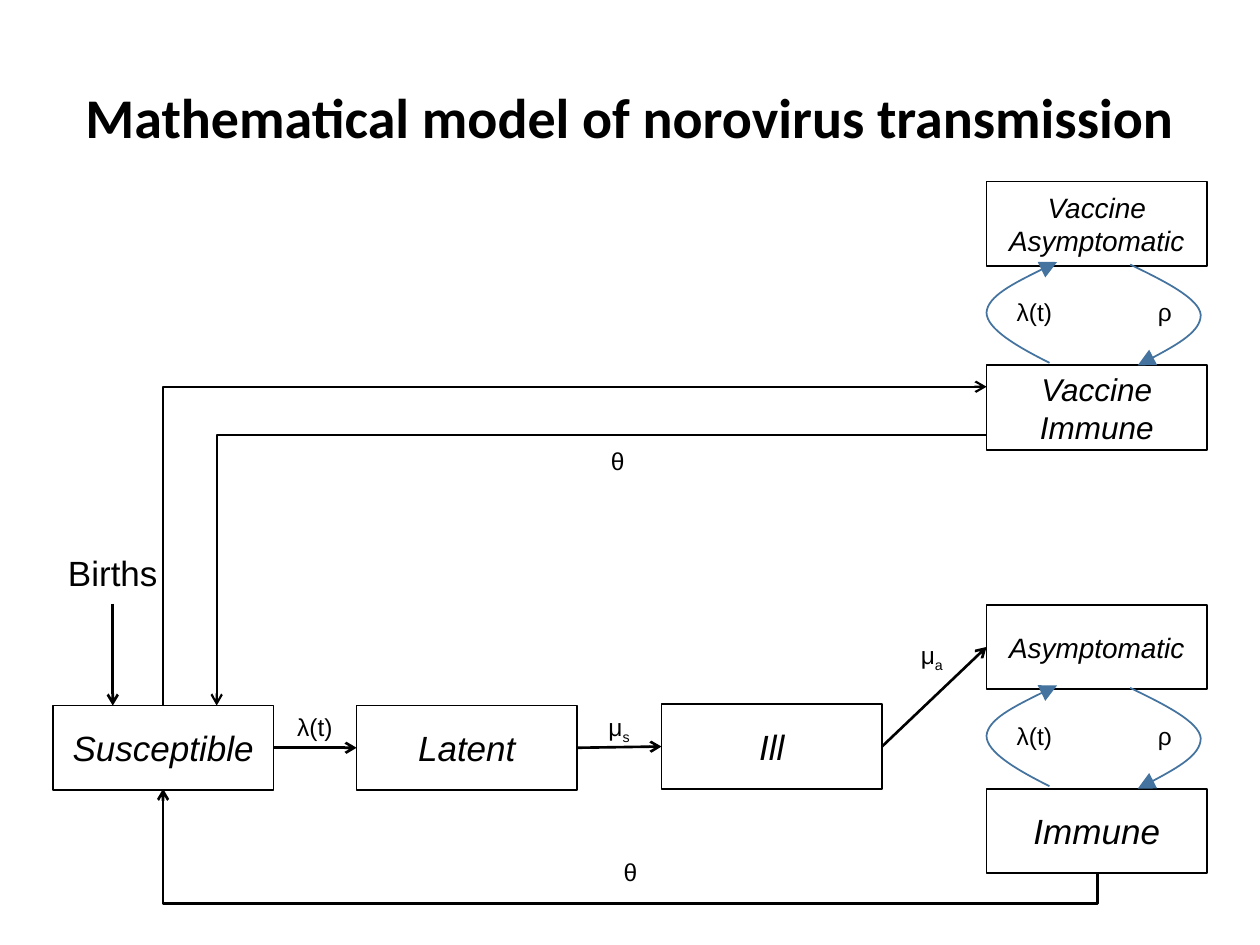
from dataclasses import dataclass

from lxml.etree import SubElement
from pptx import Presentation
from pptx.dml.color import RGBColor
from pptx.enum.shapes import MSO_CONNECTOR, MSO_SHAPE
from pptx.enum.text import MSO_ANCHOR, PP_ALIGN
from pptx.oxml.ns import qn
from pptx.util import Inches, Pt


@dataclass(frozen=True)
class Theme:
    ink: RGBColor = RGBColor(0, 0, 0)
    paper: RGBColor = RGBColor(255, 255, 255)
    curve: RGBColor = RGBColor(0x43, 0x73, 0x9E)
    title_font: str = "Calibri"
    body_font: str = "Arial"
    title: int = 32
    state: int = 20
    medium: int = 18
    small: int = 16
    label: int = 14


theme = Theme()
COLUMNS = [0.42, 2.83, 5.25, 7.83]
CHAIN_TOP = 5.6
PAIR_TOPS = [1.44, 4.8]
PAIR_STEP = 1.46
BOX_WIDTH, BOX_HEIGHT = 1.75, 0.67


def style_text(shape, size, italic=False, align=PP_ALIGN.CENTER, anchor=MSO_ANCHOR.MIDDLE):
    shape.text_frame.vertical_anchor = anchor
    for para in shape.text_frame.paragraphs:
        para.alignment = align
        for span in para.runs:
            span.font.name = theme.body_font
            span.font.size = Pt(size)
            span.font.italic = italic
            span.font.color.rgb = theme.ink


def style_line(shape, color, width, end, arrow, size="med"):
    """Colour an open line and put an arrowhead on its headEnd or tailEnd."""
    shape.line.color.rgb = color
    shape.line.width = Pt(width)
    properties = shape.element.spPr
    SubElement(properties.find(qn("a:ln")), qn("a:" + end), type=arrow, w=size, len=size)
    if properties.find(qn("a:effectLst")) is None:
        SubElement(properties, qn("a:effectLst"))


deck = Presentation()
deck.slide_width, deck.slide_height = Inches(10), Inches(7.5)
page = deck.slides.add_slide(deck.slide_layouts[5])
shapes = page.shapes

title = shapes.title
title.left, title.top, title.width, title.height = map(Inches, (0.5, 0.33, 9, 1.25))
title.text_frame.text = "Mathematical model of norovirus transmission"
style_text(title, theme.title)
title.text_frame.paragraphs[0].line_spacing = 0.9
title_font = title.text_frame.paragraphs[0].runs[0].font
title_font.name, title_font.bold = theme.title_font, True

# Elbow arrows, each turned a quarter so that it leaves its box vertically
chain_middle = COLUMNS[0] + BOX_WIDTH / 2
elbows = [
    ((8.71, 6.92), (chain_middle, 6.26), "bentConnector3", 1.5, "tailEnd"),
    ((chain_middle, CHAIN_TOP), (COLUMNS[3], 3.07), "bentConnector2", 1.25, "tailEnd"),
    ((1.72, CHAIN_TOP), (8.25, 3.45), "bentConnector2", 1.25, "headEnd"),
]
for begin, finish, preset, width, end in elbows:
    center_x, center_y = (begin[0] + finish[0]) / 2, (begin[1] + finish[1]) / 2
    turned = [Inches(value) for x, y in (begin, finish)
              for value in (center_x + y - center_y, center_y - x + center_x)]
    elbow = shapes.add_connector(MSO_CONNECTOR.ELBOW, *turned)
    elbow.rotation = 90
    elbow.element.spPr.find(qn("a:xfrm")).set("rot", str(90 * 60000))
    geometry = elbow.element.spPr.find(qn("a:prstGeom"))
    geometry.set("prst", preset)
    if preset == "bentConnector3":
        SubElement(geometry.get_or_add_avLst(), qn("a:gd"), name="adj1", fmla="val -38000")
    style_line(elbow, theme.ink, width, end, "arrow")

# State boxes
states = [
    ("Susceptible", COLUMNS[0], CHAIN_TOP, theme.state),
    ("Latent", COLUMNS[1], CHAIN_TOP, theme.state),
    ("Ill", COLUMNS[2], CHAIN_TOP - 0.01, theme.state),
    ("Asymptomatic", COLUMNS[3], PAIR_TOPS[1], theme.small),
    ("Immune", COLUMNS[3], PAIR_TOPS[1] + PAIR_STEP, theme.state),
    ("Vaccine Asymptomatic", COLUMNS[3], PAIR_TOPS[0], theme.small),
    ("Vaccine Immune", COLUMNS[3], PAIR_TOPS[0] + PAIR_STEP, theme.medium),
]
boxes = {}
for name, left, top, size in states:
    box = shapes.add_shape(MSO_SHAPE.RECTANGLE, Inches(left), Inches(top),
                           Inches(BOX_WIDTH), Inches(BOX_HEIGHT))
    box.shadow.inherit = False
    box.fill.solid()
    box.fill.fore_color.rgb = theme.paper
    box.line.color.rgb = theme.ink
    box.line.width = Pt(1)
    box.text_frame.word_wrap = True
    box.text_frame.text = name
    style_text(box, size, italic=True)
    boxes[name] = box

births = shapes.add_textbox(Inches(0.37), Inches(4.29), Inches(1.05), Inches(0.5))
births.text_frame.word_wrap = True
births.text_frame.text = "Births"
style_text(births, theme.state)

# Straight arrows
for source, target in [("Susceptible", "Latent"), ("Latent", "Ill"), ("Ill", "Asymptomatic")]:
    arrow = shapes.add_connector(MSO_CONNECTOR.STRAIGHT, 0, 0, 0, 0)
    arrow.begin_connect(boxes[source], 3)
    arrow.end_connect(boxes[target], 1)
    style_line(arrow, theme.ink, 1.5, "tailEnd", "arrow")
birth_x = births.left + births.width // 2
birth_arrow = shapes.add_connector(MSO_CONNECTOR.STRAIGHT, birth_x, Inches(4.79),
                                   birth_x, Inches(CHAIN_TOP))
birth_arrow.begin_connect(births, 2)
style_line(birth_arrow, theme.ink, 1.5, "tailEnd", "arrow")

# Curved arrows: the right one mirrors the left one about the pair's axis
AXIS = 8.68
BEND = [(-0.29, 0.64), (-0.56, 0.77), (-0.84, 0.91), (-0.85, 1.04),
        (-0.85, 1.17), (-0.61, 1.31), (-0.35, 1.44)]
for pair_top in PAIR_TOPS:
    for side, drop, end in [(1, 0, "headEnd"), (-1, 0.02, "tailEnd")]:
        points = [(Inches(AXIS + side * x), Inches(pair_top + drop + y)) for x, y in BEND]
        outline = shapes.build_freeform(*points[0])
        outline.add_line_segments(points[1:], close=False)
        curve = outline.convert_to_shape()
        # Every three straight segments become one cubic segment
        segments = list(curve.element.spPr.iter(qn("a:lnTo")))
        track = segments[0].getparent()
        for first in range(0, len(segments), 3):
            cubic = SubElement(track, qn("a:cubicBezTo"))
            for segment in segments[first:first + 3]:
                cubic.append(segment[0])
                track.remove(segment)
        curve.fill.background()
        curve.shadow.inherit = False
        style_line(curve, theme.curve, 1, end, "triangle", "lg")

# Rate labels, with an optional subscript
labels = [
    ("λ(t)", "", 2.26, 5.6, 0.48),
    ("μ", "s", 4.73, 5.6, 0.38),
    ("μ", "a", 7.21, 5.03, 0.4),
    ("θ", "", 4.85, 6.75, 0.31),
    ("θ", "", 4.75, 3.49, 0.31),
]
for pair_top in PAIR_TOPS:
    labels += [("λ(t)", "", 7.97, pair_top + 0.87, 0.48), ("ρ", "", 9.09, pair_top + 0.87, 0.32)]
for symbol, subscript, left, top, width in labels:
    label = shapes.add_textbox(Inches(left), Inches(top), Inches(width), Inches(0.34))
    label.text_frame.word_wrap = False
    para = label.text_frame.paragraphs[0]
    para.text = symbol
    if subscript:
        para.add_run().text = subscript
    style_text(label, theme.label, align=PP_ALIGN.LEFT, anchor=MSO_ANCHOR.TOP)
    for properties in list(label.element.iter(qn("a:rPr")))[1:]:
        properties.set("baseline", "-25000")

deck.save("out.pptx")
